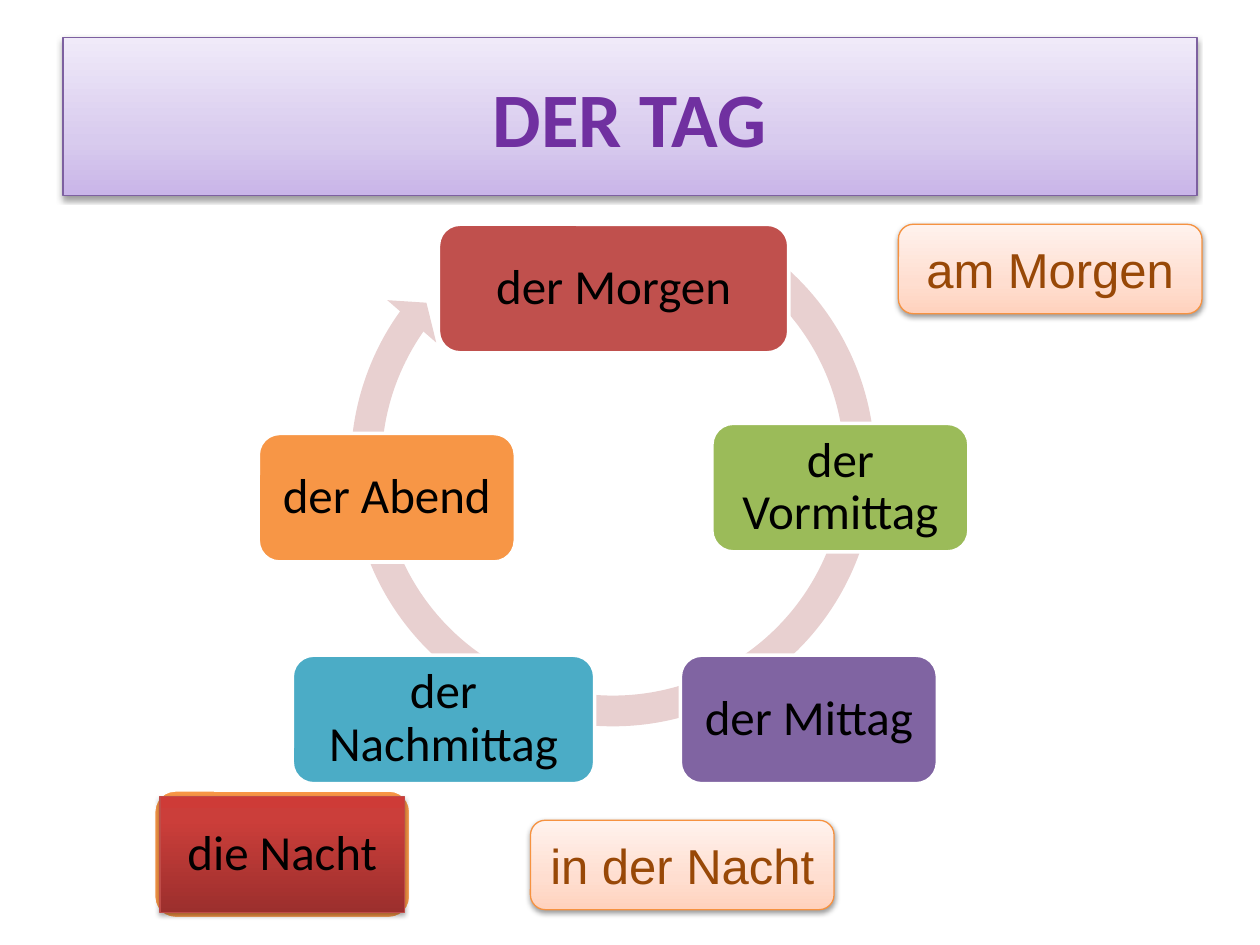
import pptx
import pptx.dml.color
import pptx.enum.shapes
import pptx.enum.text
import pptx.oxml.ns
import pptx.util
from lxml import etree
from pptx.util import Inches

SHAPE = pptx.enum.shapes.MSO_SHAPE
qn = pptx.oxml.ns.qn

COLORS = {
    "black": "000000", "white": "FFFFFF", "title": "7030A0", "title_edge": "7D60A0",
    "ring": "E8D0D0", "red": "C0504D", "green": "9BBB59", "violet": "8064A2",
    "blue": "4BACC6", "orange": "F79646", "night_edge": "BF4C48",
    "phrase": "984807", "phrase_edge": "F69240",
}
# Gradient stops run from the bottom edge to the top edge.
GRADIENTS = {
    "title": [(0, "C9B5E8"), (35, "D8CBEE"), (100, "F0EAF9")],
    "night": [(0, "9C2F2D"), (80, "CB3E3A"), (100, "CE3B37")],
    "phrase": [(0, "FFD2BD"), (35, "FFDED0"), (100, "FFF2ED")],
}
STAGE_HEIGHT = 1.02
STAGES = [
    ("der Morgen", 3.48, 1.78, 2.78, "red"),
    ("der Vormittag", 5.65, 3.36, 2.04, "green"),
    ("der Mittag", 5.4, 5.2, 2.04, "violet"),
    ("der Nachmittag", 2.32, 5.2, 2.4, "blue"),
    ("der Abend", 2.05, 3.44, 2.04, "orange"),
]
PHRASES = [("am Morgen", 7.13, 1.78), ("in der Nacht", 4.21, 6.51)]


def rgb(name):
    return pptx.dml.color.RGBColor.from_string(COLORS[name])


def add_box(page, kind, left, top, width, height, fill=None, edge=None, edge_width=0.75):
    box = page.shapes.add_shape(kind, Inches(left), Inches(top), Inches(width), Inches(height))
    box.shadow.inherit = False
    if fill:
        box.fill.solid()
        box.fill.fore_color.rgb = rgb(fill)
    if edge:
        box.line.color.rgb = rgb(edge)
        box.line.width = pptx.util.Pt(edge_width)
    else:
        box.line.fill.background()
    return box


def add_glossy_box(page, kind, left, top, width, height, gradient, edge, opacity=38):
    """Add a box with a vertical gradient and a soft shadow below it."""
    box = add_box(page, kind, left, top, width, height, edge=edge)
    box.fill.gradient()
    box.fill.gradient_angle = 90
    properties = box._element.spPr
    stops = properties.find(qn("a:gradFill")).find(qn("a:gsLst"))
    for stop in list(stops):
        stops.remove(stop)
    for position, color in GRADIENTS[gradient]:
        stop = etree.SubElement(stops, qn("a:gs"), pos=str(position * 1000))
        etree.SubElement(stop, qn("a:srgbClr"), val=color)
    shadow = etree.SubElement(
        properties.find(qn("a:effectLst")), qn("a:outerShdw"),
        blurRad=str(pptx.util.Pt(3.1)), dist=str(pptx.util.Pt(1.6)),
        dir="5400000", rotWithShape="0")
    color = etree.SubElement(shadow, qn("a:srgbClr"), val=COLORS["black"])
    etree.SubElement(color, qn("a:alpha"), val=str(opacity * 1000))
    return box


def write(box, text, font="Calibri", size=28, color="black", bold=False,
          spacing=None, inset=None, wrap=True):
    frame = box.text_frame
    frame.word_wrap = wrap
    frame.vertical_anchor = pptx.enum.text.MSO_ANCHOR.MIDDLE
    if inset is not None:
        frame.margin_left = frame.margin_right = Inches(inset)
        frame.margin_top = frame.margin_bottom = Inches(inset)
    para = frame.paragraphs[0]
    para.alignment = pptx.enum.text.PP_ALIGN.CENTER
    if spacing:
        para.line_spacing = spacing
    span = para.add_run()
    span.text = text
    span.font.name = font
    span.font.size = pptx.util.Pt(size)
    span.font.bold = bold
    span.font.color.rgb = rgb(color)


def add_title(page):
    box = add_glossy_box(page, SHAPE.RECTANGLE, 0.5, 0.3, 9, 1.25, "title", "title_edge")
    write(box, "DER TAG", size=44, color="title", bold=True)


def add_cycle(page):
    ring = add_box(page, SHAPE.CIRCULAR_ARROW, 2.65, 1.47, 4.43, 4.43, fill="ring")
    for index, value in enumerate((0.055, 3.31, 129.23, 179.3, 0.058)):
        ring.adjustments[index] = value
    for text, left, top, width, color in STAGES:
        box = add_box(page, SHAPE.ROUNDED_RECTANGLE, left, top, width, STAGE_HEIGHT,
                      fill=color, edge="white", edge_width=2)
        write(box, text, spacing=0.9, inset=0.07)


def add_night(page):
    left, top, width, rim = 1.22, 6.27, 2.04, 0.05
    add_box(page, SHAPE.ROUNDED_RECTANGLE, left, top, width, STAGE_HEIGHT,
            fill="orange", edge="white", edge_width=2)
    box = add_glossy_box(page, SHAPE.RECTANGLE, left + rim, top + rim, width - 2 * rim,
                         STAGE_HEIGHT - 2 * rim, "night", "night_edge", opacity=35)
    write(box, "die Nacht", spacing=0.9, inset=0.12)


def add_phrase(page, text, left, top):
    box = add_glossy_box(page, SHAPE.ROUNDED_RECTANGLE, left, top, 2.41, 0.71,
                         "phrase", "phrase_edge")
    write(box, text, font="Arial", color="phrase", wrap=False)


def main():
    deck = pptx.Presentation()
    deck.slide_width, deck.slide_height = Inches(10), Inches(7.5)
    page = deck.slides.add_slide(deck.slide_layouts[6])
    add_title(page)
    add_cycle(page)
    add_night(page)
    for text, left, top in PHRASES:
        add_phrase(page, text, left, top)
    deck.save("out.pptx")


if __name__ == "__main__":
    main()
